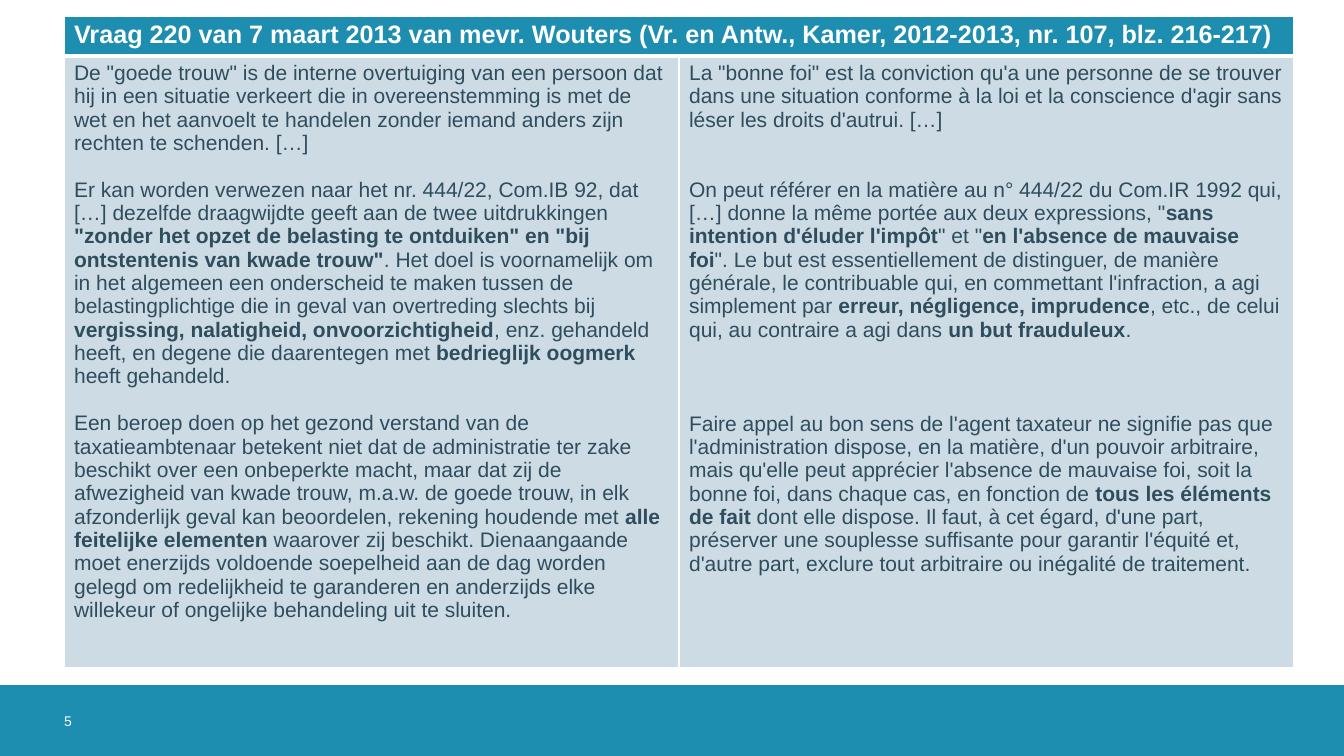
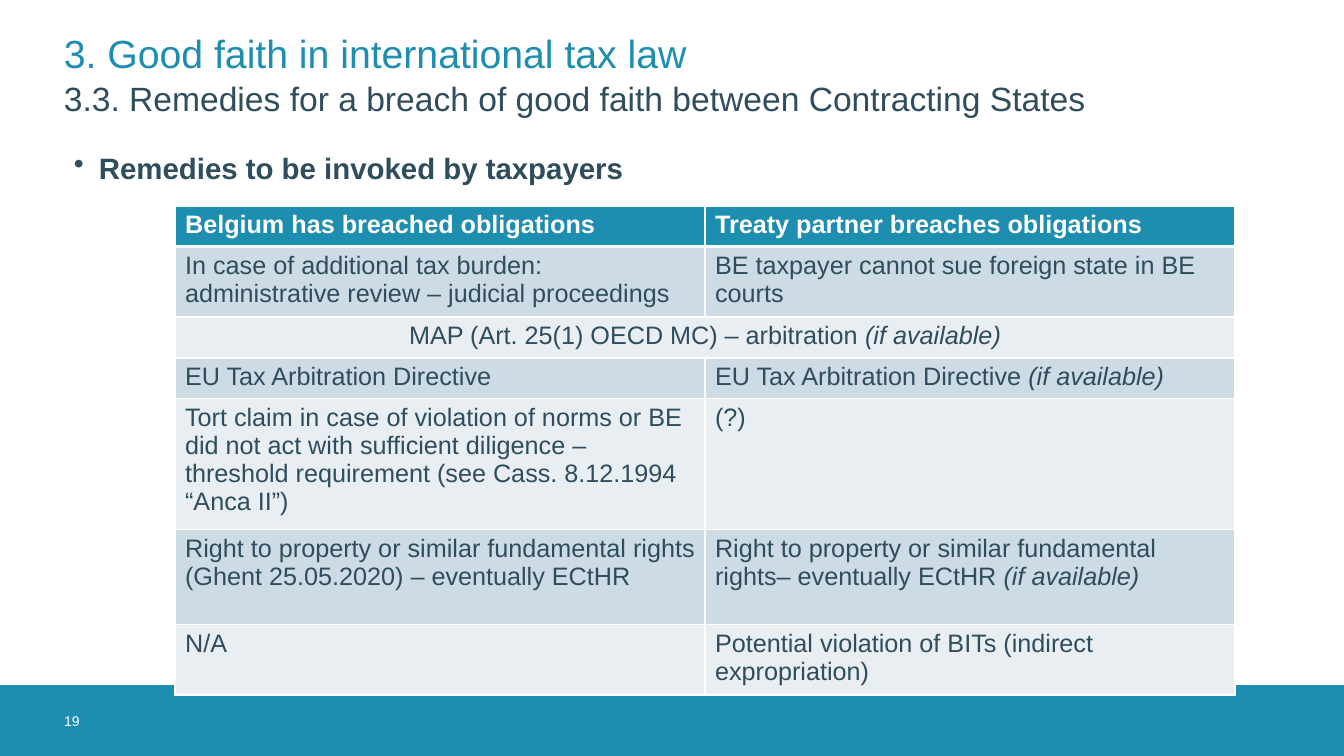
from lxml import etree
from pptx import Presentation
from pptx import util as u
from pptx.dml.color import RGBColor
from pptx.enum import shapes, text
from pptx.oxml import ns

PX = 914400 / 100.8
WIDTH, HEIGHT = 1344, 756
LEFT, TEXT_WIDTH = 64, 1217
BAND_TOP, BAND_HEIGHT = 685, 71
FONT = "Arial"
TEAL, SLATE, WHITE = "1D8DB0", "2F4D5D", "FFFFFF"
ROW_FILLS = ("CDDBE4", "E8EEF2")
LINE_PITCH = 1.117

QUESTION = ("Vraag 220 van 7 maart 2013 van mevr. Wouters "
            "(Vr. en Antw., Kamer, 2012-2013, nr. 107, blz. 216-217)")

# Asterisks enclose emphasised words.
DUTCH = [
    'De "goede trouw" is de interne overtuiging van een persoon dat hij in een situatie verkeert '
    'die in overeenstemming is met de wet en het aanvoelt te handelen zonder iemand anders zijn '
    'rechten te schenden. […]',
    'Er kan worden verwezen naar het nr. 444/22, Com.IB 92, dat […] dezelfde draagwijdte geeft '
    'aan de twee uitdrukkingen *"zonder het opzet de belasting te ontduiken" en "bij ontstentenis '
    'van kwade trouw"*. Het doel is voornamelijk om in het algemeen een onderscheid te maken '
    'tussen de belastingplichtige die in geval van overtreding slechts bij *vergissing, '
    'nalatigheid, onvoorzichtigheid*, enz. gehandeld heeft, en degene die daarentegen met '
    '*bedrieglijk oogmerk *heeft gehandeld.',
    'Een beroep doen op het gezond verstand van de taxatieambtenaar betekent niet dat de '
    'administratie ter zake beschikt over een onbeperkte macht, maar dat zij de afwezigheid van '
    'kwade trouw, m.a.w. de goede trouw, in elk afzonderlijk geval kan beoordelen, rekening '
    'houdende met *alle feitelijke elementen* waarover zij beschikt. Dienaangaande moet enerzijds '
    'voldoende soepelheid aan de dag worden gelegd om redelijkheid te garanderen en anderzijds '
    'elke willekeur of ongelijke behandeling uit te sluiten.',
]
FRENCH = [
    'La "bonne foi" est la conviction qu\'a une personne de se trouver dans une situation conforme '
    'à la loi et la conscience d\'agir sans léser les droits d\'autrui. […]',
    'On peut référer en la matière au n° 444/22 du Com.IR 1992 qui, […] donne la même portée aux '
    'deux expressions, "*sans intention d\'éluder l\'impôt*" et "*en l\'absence de mauvaise foi*". '
    'Le but est essentiellement de distinguer, de manière générale, le contribuable qui, en '
    'commettant l\'infraction, a agi simplement par *erreur, négligence, imprudence*, etc., de '
    'celui qui, au contraire a agi dans *un but frauduleux*.',
    'Faire appel au bon sens de l\'agent taxateur ne signifie pas que l\'administration dispose, '
    'en la matière, d\'un pouvoir arbitraire, mais qu\'elle peut apprécier l\'absence de mauvaise '
    'foi, soit la bonne foi, dans chaque cas, en fonction de *tous les éléments de fait *dont elle '
    'dispose. Il faut, à cet égard, d\'une part, préserver une souplesse suffisante pour garantir '
    'l\'équité et, d\'autre part, exclure tout arbitraire ou inégalité de traitement.',
]

REMEDIES = [
    ("Belgium has breached obligations", "Treaty partner breaches obligations"),
    ("In case of additional tax burden: administrative review – judicial proceedings",
     "BE taxpayer cannot sue foreign state in BE courts"),
    ("MAP (Art. 25(1) OECD MC) – arbitration *(if available)*",),
    ("EU Tax Arbitration Directive", "EU Tax Arbitration Directive *(if available)*"),
    ("Tort claim in case of violation of norms or BE did not act with sufficient diligence – "
     "threshold requirement (see Cass. 8.12.1994 “Anca II”)", "(?)"),
    ("Right to property or similar fundamental rights (Ghent 25.05.2020) – eventually ECtHR",
     "Right to property or similar fundamental rights– eventually ECtHR *(if available)*"),
    ("N/A", "Potential violation of BITs (indirect expropriation)"),
]
REMEDY_HEIGHTS = (38, 66, 41, 40, 123, 95, 66)


def px(length):
    return u.Emu(round(length * PX))


def color(value):
    return RGBColor.from_string(value)


def style(font, size, ink, bold=False):
    font.name, font.size, font.bold = FONT, u.Pt(size), bold
    font.color.rgb = color(ink)


def write(para, content, size, ink, bold=False, emphasis="bold"):
    """Fill a paragraph, applying the emphasis to the parts between asterisks."""
    style(para.font, size, ink, bold)
    for index, part in enumerate(content.split("*")):
        if part:
            span = para.add_run()
            span.text = part
            if index % 2:
                setattr(span.font, emphasis, True)


def add_text(page, content, left, top, width, height, size, ink,
             inset=False, middle=True, bold=False, bullet=False):
    box = page.shapes.add_textbox(px(left), px(top), px(width), px(height))
    frame = box.text_frame
    frame.word_wrap = True
    if not inset:
        frame.margin_left = frame.margin_right = frame.margin_top = frame.margin_bottom = 0
    frame.vertical_anchor = text.MSO_ANCHOR.MIDDLE if middle else text.MSO_ANCHOR.TOP
    para = frame.paragraphs[0]
    if bullet:
        properties = para._p.get_or_add_pPr()
        properties.set("marL", str(px(25)))
        properties.set("indent", str(-px(25)))
        etree.SubElement(properties, ns.qn("a:buChar")).set("char", "•")
    write(para, content, size, ink, bold)


def add_page(deck, number):
    """Add a blank slide with the footer band and its slide number."""
    page = deck.slides.add_slide(deck.slide_layouts[6])
    band = page.shapes.add_shape(shapes.MSO_SHAPE.RECTANGLE, 0, px(BAND_TOP),
                                 px(WIDTH), px(BAND_HEIGHT))
    band.shadow.inherit = False
    band.fill.solid()
    band.fill.fore_color.rgb = color(TEAL)
    band.line.fill.background()
    add_text(page, str(number), LEFT, BAND_TOP, 71, BAND_HEIGHT, 10, WHITE)
    return page


def paint_cell(cell, fill, bottom, top):
    properties = cell._tc.get_or_add_tcPr()
    for side, points in (("lnL", 1), ("lnR", 1), ("lnT", top), ("lnB", bottom)):
        line = etree.SubElement(properties, ns.qn("a:" + side), w=str(u.Pt(points)))
        solid = etree.SubElement(line, ns.qn("a:solidFill"))
        etree.SubElement(solid, ns.qn("a:srgbClr"), val=WHITE)
    cell.fill.solid()
    cell.fill.fore_color.rgb = color(fill)


def add_grid(page, left, top, column_width, heights):
    """Add a two-column table with a heading row and alternating body rows."""
    grid = page.shapes.add_table(len(heights), 2, px(left), px(top),
                                 px(2 * column_width), px(sum(heights))).table
    grid.horz_banding = False
    for column in grid.columns:
        column.width = px(column_width)
    for index, height in enumerate(heights):
        grid.rows[index].height = px(height)
        fill = ROW_FILLS[(index - 1) % 2] if index else TEAL
        for cell in grid.rows[index].cells:
            paint_cell(cell, fill, bottom=1 if index else 3, top=3 if index == 1 else 1)
    return grid


def fill_cell(cell, paragraphs, size, gaps=(), **look):
    """Write paragraphs into a cell; gaps count the text lines left between them."""
    frame = cell.text_frame
    for index, content in enumerate(paragraphs):
        para = frame.add_paragraph() if index else frame.paragraphs[0]
        if index:
            para.space_before = u.Pt(round(gaps[index - 1] * size * LINE_PITCH, 1))
        write(para, content, size, **look)


def build_question(deck):
    page = add_page(deck, 5)
    grid = add_grid(page, LEFT, 16, 615, (39, 611))
    grid.cell(0, 0).merge(grid.cell(0, 1))
    fill_cell(grid.cell(0, 0), [QUESTION], 18, ink=WHITE, bold=True)
    fill_cell(grid.cell(1, 0), DUTCH, 15, gaps=(1, 1), ink=SLATE)
    fill_cell(grid.cell(1, 1), FRENCH, 15, gaps=(2, 3), ink=SLATE)


def build_remedies(deck):
    page = add_page(deck, 19)
    add_text(page, "3. Good faith in international tax law", LEFT, 23, TEXT_WIDTH, 59, 28, TEAL)
    add_text(page, "3.3. Remedies for a breach of good faith between Contracting States",
             54, 73, 1227, 70, 24, SLATE, inset=True, middle=False)
    add_text(page, "Remedies to be invoked by taxpayers", LEFT, 145, TEXT_WIDTH, 50, 21, SLATE,
             inset=True, middle=False, bold=True, bullet=True)
    grid = add_grid(page, 175, 206, 530, REMEDY_HEIGHTS)
    for row, entries in enumerate(REMEDIES):
        heading = row == 0
        for column, content in enumerate(entries):
            fill_cell(grid.cell(row, column), [content], 18, ink=WHITE if heading else SLATE,
                      bold=heading, emphasis="italic")
        if len(entries) == 1:
            grid.cell(row, 0).merge(grid.cell(row, 1))
            grid.cell(row, 0).text_frame.paragraphs[0].alignment = text.PP_ALIGN.CENTER


def main():
    deck = Presentation()
    deck.slide_width, deck.slide_height = px(WIDTH), px(HEIGHT)
    build_question(deck)
    build_remedies(deck)
    deck.save("out.pptx")


if __name__ == "__main__":
    main()
